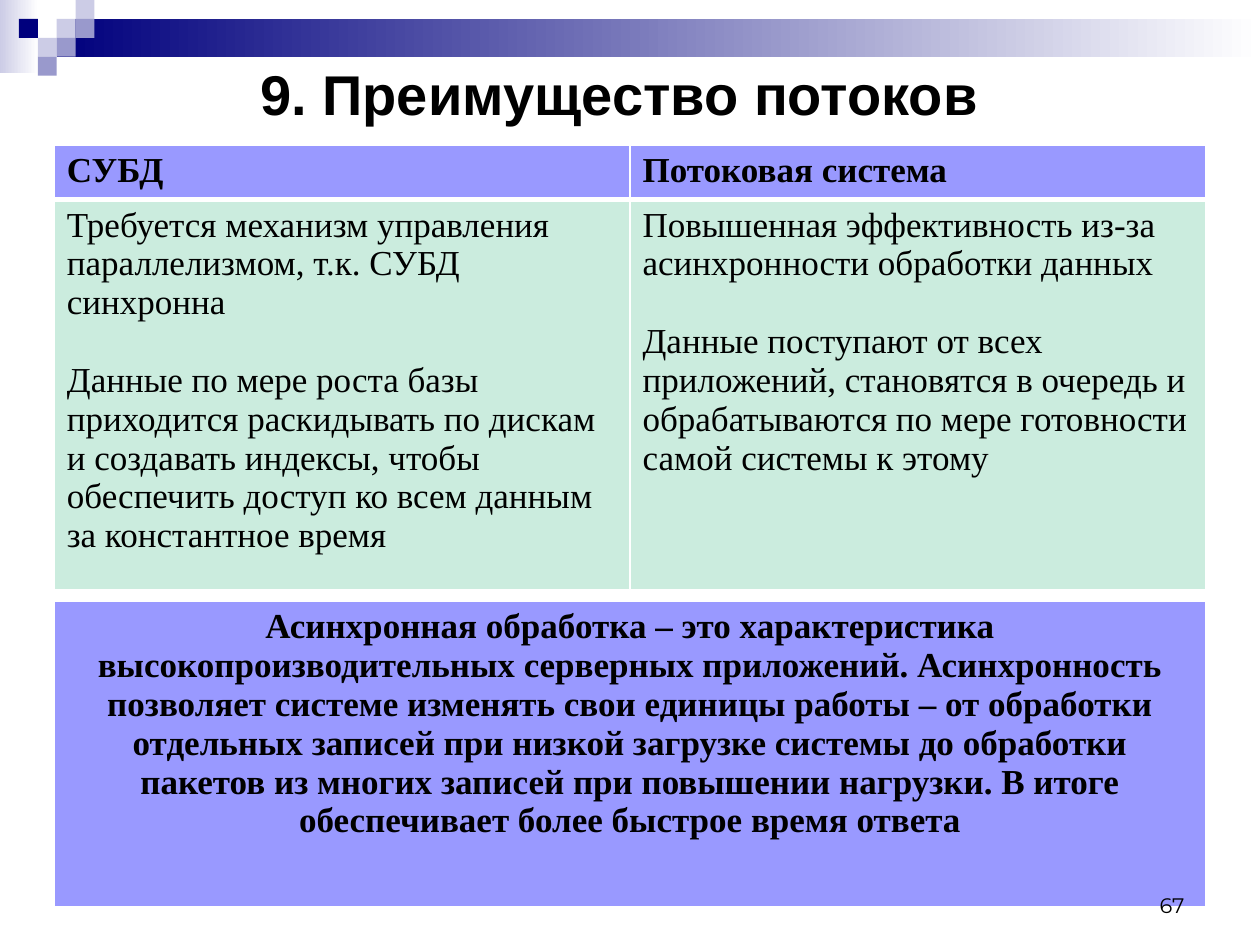
from lxml import etree
from pptx import Presentation
from pptx.dml.color import RGBColor
from pptx.enum import shapes, text
from pptx.oxml.ns import qn
from pptx.util import Pt

# Content
TITLE = "9. Преимущество потоков"
COMPARISON = [
    [["СУБД"], ["Потоковая система"]],
    [
        ["Требуется механизм управления параллелизмом, т.к. СУБД синхронна",
         "Данные по мере роста базы приходится раскидывать по дискам и создавать "
         "индексы, чтобы обеспечить доступ ко всем данным за константное время"],
        ["Повышенная эффективность из-за асинхронности обработки данных",
         "Данные поступают от всех приложений, становятся в очередь и "
         "обрабатываются по мере готовности самой системы к этому"],
    ],
]
CONCLUSION = [[[
    "Асинхронная обработка – это характеристика высокопроизводительных серверных "
    "приложений. Асинхронность позволяет системе изменять свои единицы работы – от "
    "обработки отдельных записей при низкой загрузке системы до обработки пакетов из "
    "многих записей при повышении нагрузки. В итоге обеспечивает более быстрое время ответа"
]]]
PAGE_NUMBER = "67"

THEME = {
    "text": "000000", "white": "FFFFFF", "navy": "00007D",
    "pale": "CCCCE6", "mid": "9999CC", "header": "9999FF", "body": "CBECDE",
    "title_font": "Arial", "table_font": "Times New Roman", "number_font": "Montserrat",
    "title_size": 32, "table_size": 20, "number_size": 12,
}

# Layout in points
WIDTH, HEIGHT = 720, 540
TABLE_LEFT, TABLE_WIDTH = 31, 658
SQUARE = 10.8
GRID_LEFT = 21.6
GRADIENTS = [((0, 0, 22, 41.8), "pale"), ((32.4, 10.8, 687.6, 21.6), "navy")]
SQUARES = [  # column, row, colour
    (1, 1, "pale"), (2, 0, "pale"), (2, 1, "mid"), (0, 2, "pale"),
    (-1, 1, "navy"), (1, 2, "mid"), (0, 3, "mid"),
]


def color(name):
    return RGBColor.from_string(THEME[name])


def write(frame, paragraphs, *, style, bold=False, align=text.PP_ALIGN.LEFT, gap=0):
    frame.word_wrap = True
    for index, line in enumerate(paragraphs):
        paragraph = frame.paragraphs[0] if index == 0 else frame.add_paragraph()
        paragraph.text = line
        paragraph.alignment = align
        if index:
            paragraph.space_before = Pt(gap)
        font = paragraph.runs[0].font
        font.name = THEME[style + "_font"]
        font.size = Pt(THEME[style + "_size"])
        font.bold = bold
        font.color.rgb = color("text")


def add_rectangle(slide, box, fill, fade=False):
    shape = slide.shapes.add_shape(shapes.MSO_SHAPE.RECTANGLE, *map(Pt, box))
    shape.shadow.inherit = False
    shape.line.fill.background()
    if fade:
        shape.fill.gradient()
        shape.fill.gradient_angle = 0
        for stop, name in zip(shape.fill.gradient_stops, (fill, "white")):
            stop.color.rgb = color(name)
    else:
        shape.fill.solid()
        shape.fill.fore_color.rgb = color(fill)


def set_borders(cell, **widths):
    properties = cell._tc.get_or_add_tcPr()
    for index, side in enumerate("LRTB"):
        line = etree.Element(qn("a:ln" + side), w=str(Pt(widths.get(side, 1))))
        fill = etree.SubElement(line, qn("a:solidFill"))
        etree.SubElement(fill, qn("a:srgbClr"), val=THEME["white"])
        properties.insert(index, line)


def add_table(slide, rows, top, heights, align=text.PP_ALIGN.LEFT):
    columns = len(rows[0])
    table = slide.shapes.add_table(
        len(rows), columns, Pt(TABLE_LEFT), Pt(top), Pt(TABLE_WIDTH), Pt(sum(heights))).table
    for column in table.columns:
        column.width = Pt(TABLE_WIDTH / columns)
    for row_index, (row, height) in enumerate(zip(rows, heights)):
        is_header = row_index == 0
        table.rows[row_index].height = Pt(height)
        for column_index, paragraphs in enumerate(row):
            cell = table.cell(row_index, column_index)
            cell.fill.solid()
            cell.fill.fore_color.rgb = color("header" if is_header else "body")
            set_borders(cell, **({"B": 3} if is_header else {"T": 3}))
            write(cell.text_frame, paragraphs, style="table", bold=is_header,
                  align=align, gap=22.2)


def main():
    presentation = Presentation()
    presentation.slide_width, presentation.slide_height = Pt(WIDTH), Pt(HEIGHT)
    slide = presentation.slides.add_slide(presentation.slide_layouts[5])

    # Decorative band and squares
    for box, name in GRADIENTS:
        add_rectangle(slide, box, name, fade=True)
    for column, row, name in SQUARES:
        box = (GRID_LEFT + column * SQUARE, row * SQUARE, SQUARE, SQUARE)
        add_rectangle(slide, box, name)

    # Title
    title = slide.shapes.title
    title.left, title.top, title.width, title.height = map(Pt, (48, 23, 612, 60))
    title.text_frame.vertical_anchor = text.MSO_ANCHOR.MIDDLE
    write(title.text_frame, [TITLE], style="title", bold=True, align=text.PP_ALIGN.CENTER)

    # Comparison and conclusion
    add_table(slide, COMPARISON, 83, (31, 223))
    add_table(slide, CONCLUSION, 343.5, (175.5,), align=text.PP_ALIGN.CENTER)

    # Page number
    number = slide.shapes.add_textbox(*map(Pt, (516, 492, 168, 36)))
    number.text_frame.vertical_anchor = text.MSO_ANCHOR.BOTTOM
    write(number.text_frame, [PAGE_NUMBER], style="number", align=text.PP_ALIGN.RIGHT)

    presentation.save("out.pptx")


if __name__ == "__main__":
    main()
